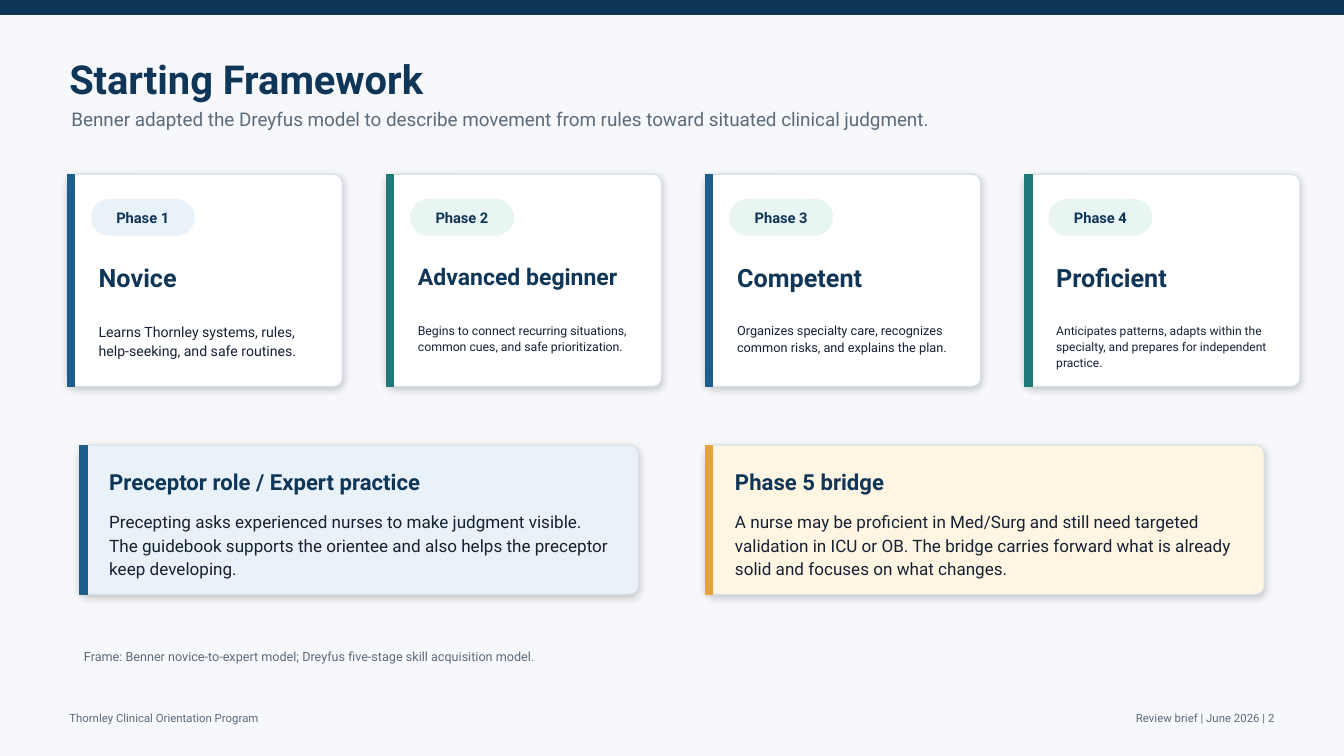
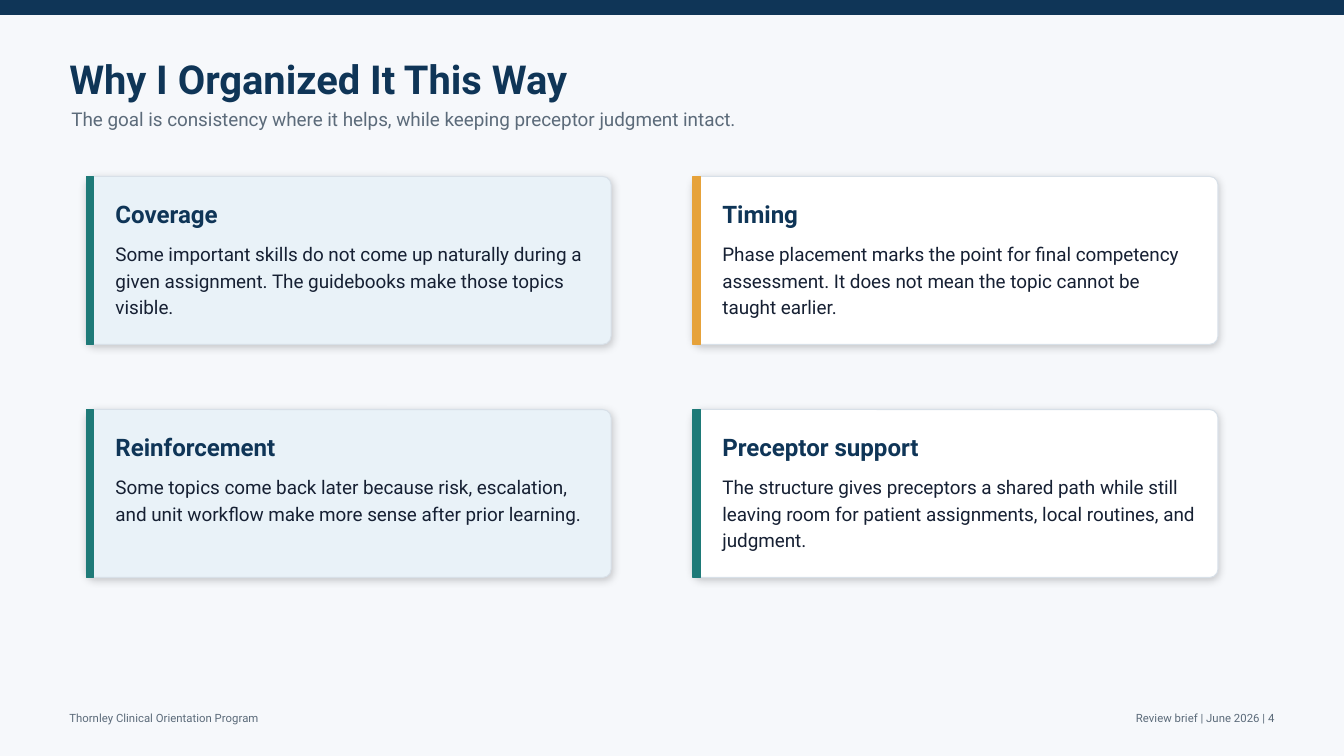
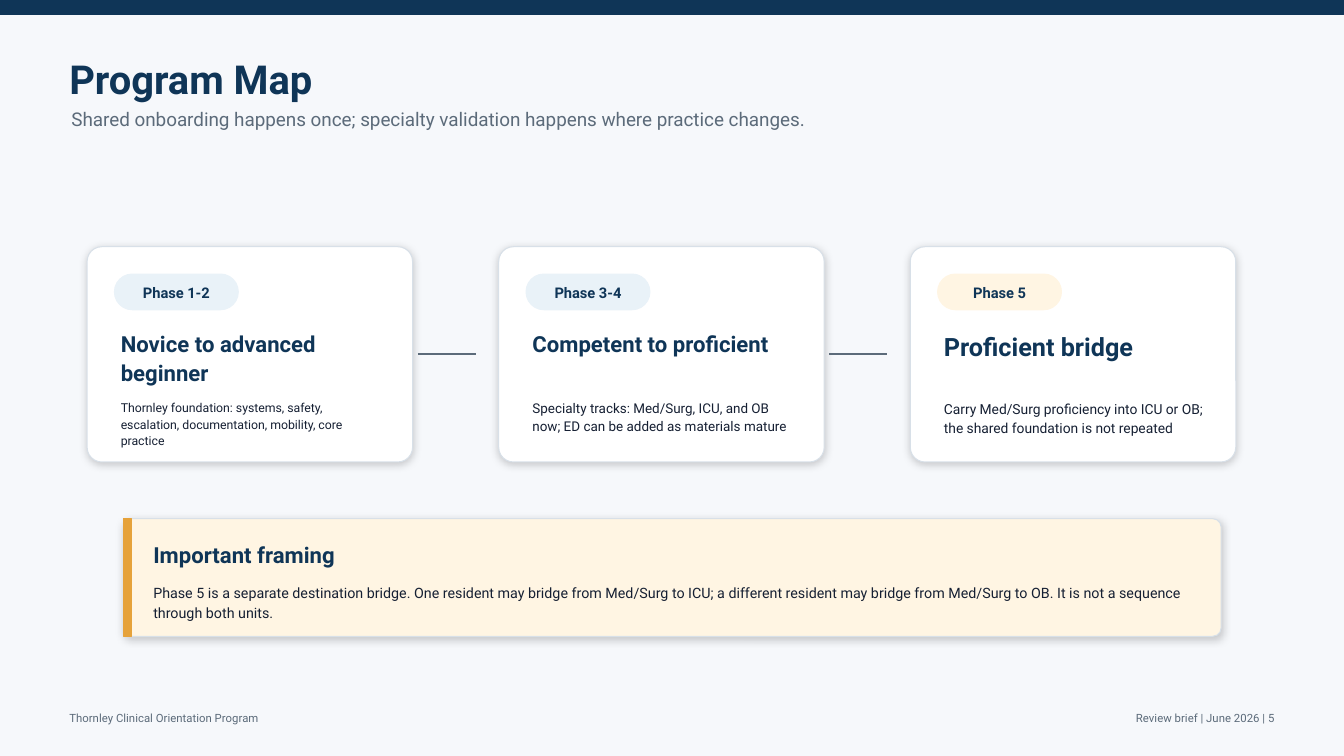
from dataclasses import dataclass

from lxml import etree
from pptx import Presentation
from pptx import util as u
from pptx.dml.color import RGBColor
from pptx.enum import shapes, text
from pptx.oxml.ns import qn

COLUMNS, ROWS = 1280, 720
WIDTH, HEIGHT = u.Emu(12192000), u.Emu(6858000)
RECT = shapes.MSO_SHAPE.RECTANGLE
ROUND = shapes.MSO_SHAPE.ROUNDED_RECTANGLE
LEFT, CENTER, RIGHT = text.PP_ALIGN.LEFT, text.PP_ALIGN.CENTER, text.PP_ALIGN.RIGHT


@dataclass(frozen=True)
class Theme:
    font: str = "Roboto"
    paper: str = "F6F8FB"
    white: str = "FFFFFF"
    navy: str = "0F3557"
    ink: str = "162033"
    muted: str = "5C6B7A"
    edge: str = "D8E0E8"
    blue: str = "1E5C8A"
    teal: str = "1E7A78"
    amber: str = "E6A23A"
    pale_blue: str = "E9F2F8"
    pale_teal: str = "E8F5F3"
    pale_amber: str = "FFF5E3"
    title: float = 28.5
    subtitle: float = 13.5
    footer: float = 8.1
    note: float = 9
    pill: float = 10.5


THEME = Theme()


@dataclass(frozen=True)
class Area:
    column: float
    row: float
    columns: float
    rows: float

    def inside(self, column: float, row: float, columns: float, rows: float) -> "Area":
        return Area(self.column + column, self.row + row, columns, rows)

    def place(self) -> tuple:
        return across(self.column), down(self.row), across(self.columns), down(self.rows)


@dataclass(frozen=True)
class Style:
    size: float
    color: str
    bold: bool = False
    align: text.PP_ALIGN = LEFT
    spacing: float = 1.08


@dataclass(frozen=True)
class Phase:
    label: str
    name: str
    detail: str
    name_size: float
    detail_size: float
    pill: str
    accent: str = ""


@dataclass(frozen=True)
class PhaseLayout:
    first: Area
    pitch: float
    corner: float
    pill: Area
    name: Area
    detail: Area
    spacing: float


@dataclass(frozen=True)
class Panel:
    area: Area
    heading: str
    body: str
    fill: str
    accent: str
    heading_size: float
    body_size: float


FRAMEWORK = PhaseLayout(
    Area(64, 166, 262, 202), 304, 8,
    Area(23, 24, 98, 34), Area(26, 80, 210, 52), Area(26, 138, 210, 50), 1.12)
PROGRAM = PhaseLayout(
    Area(83, 235, 310, 205), 392, 14,
    Area(26, 26, 118, 34), Area(28, 76, 255, 62), Area(28, 142, 255, 52), 1.14)

FRAMEWORK_PHASES = [
    Phase("Phase 1", "Novice",
          "Learns Thornley systems, rules, help-seeking, and safe routines.",
          18, 10.1, THEME.pale_blue, THEME.blue),
    Phase("Phase 2", "Advanced beginner",
          "Begins to connect recurring situations, common cues, and safe prioritization.",
          16.4, 8.8, THEME.pale_teal, THEME.teal),
    Phase("Phase 3", "Competent",
          "Organizes specialty care, recognizes common risks, and explains the plan.",
          18, 9.1, THEME.pale_teal, THEME.blue),
    Phase("Phase 4", "Proficient",
          "Anticipates patterns, adapts within the specialty, and prepares for "
          "independent practice.",
          18, 8.6, THEME.pale_teal, THEME.teal),
]
PROGRAM_PHASES = [
    Phase("Phase 1-2", "Novice to advanced beginner",
          "Thornley foundation: systems, safety, escalation, documentation, mobility, "
          "core practice",
          15.8, 8.8, THEME.pale_blue),
    Phase("Phase 3-4", "Competent to proficient",
          "Specialty tracks: Med/Surg, ICU, and OB now; ED can be added as materials mature",
          15.8, 9.6, THEME.pale_blue),
    Phase("Phase 5", "Proficient bridge",
          "Carry Med/Surg proficiency into ICU or OB; the shared foundation is not repeated",
          18, 9.9, THEME.pale_amber),
]
FRAMEWORK_PANELS = [
    Panel(Area(76, 424, 532, 142), "Preceptor role / Expert practice",
          "Precepting asks experienced nurses to make judgment visible. The guidebook "
          "supports the orientee and also helps the preceptor keep developing.",
          THEME.pale_blue, THEME.blue, 15.8, 12.2),
    Panel(Area(672, 424, 532, 142), "Phase 5 bridge",
          "A nurse may be proficient in Med/Surg and still need targeted validation in "
          "ICU or OB. The bridge carries forward what is already solid and focuses on "
          "what changes.",
          THEME.pale_amber, THEME.amber, 15.8, 12.2),
]
REASONS = [
    ("Coverage",
     "Some important skills do not come up naturally during a given assignment. "
     "The guidebooks make those topics visible.", THEME.teal),
    ("Timing",
     "Phase placement marks the point for final competency assessment. It does not "
     "mean the topic cannot be taught earlier.", THEME.amber),
    ("Reinforcement",
     "Some topics come back later because risk, escalation, and unit workflow make "
     "more sense after prior learning.", THEME.teal),
    ("Preceptor support",
     "The structure gives preceptors a shared path while still leaving room for "
     "patient assignments, local routines, and judgment.", THEME.teal),
]
FRAMING = Panel(
    Area(118, 494, 1045, 112), "Important framing",
    "Phase 5 is a separate destination bridge. One resident may bridge from Med/Surg "
    "to ICU; a different resident may bridge from Med/Surg to OB. It is not a sequence "
    "through both units.",
    THEME.pale_amber, THEME.amber, 15.8, 10.2)


def across(columns: float) -> u.Emu:
    return u.Emu(round(WIDTH * columns / COLUMNS))


def down(rows: float) -> u.Emu:
    return u.Emu(round(HEIGHT * rows / ROWS))


def rgb(color: str) -> RGBColor:
    return RGBColor.from_string(color)


def add_text(page, area: Area, words: str, style: Style) -> None:
    box = page.shapes.add_textbox(*area.place())
    frame = box.text_frame
    frame.word_wrap = True
    frame.margin_left = frame.margin_right = across(4)
    frame.margin_top = frame.margin_bottom = down(2)
    para = frame.paragraphs[0]
    para.alignment = style.align
    para.line_spacing = style.spacing
    span = para.add_run()
    span.text = words
    span.font.name = THEME.font
    span.font.size = u.Pt(style.size)
    span.font.bold = style.bold
    span.font.color.rgb = rgb(style.color)


def add_block(page, area: Area, fill: str, corner: float = 0):
    block = page.shapes.add_shape(ROUND if corner else RECT, *area.place())
    if corner:
        block.adjustments[0] = corner / area.rows
    block.shadow.inherit = False
    block.fill.solid()
    block.fill.fore_color.rgb = rgb(fill)
    block.line.color.rgb = rgb(fill)
    block.line.width = u.Pt(0)
    return block


def add_card(page, area: Area, fill: str, corner: float, accent: str = "") -> None:
    card = add_block(page, area, fill, corner)
    card.line.color.rgb = rgb(THEME.edge)
    card.line.width = u.Pt(0.75)
    effects = card._element.spPr.find(qn("a:effectLst"))
    shadow = etree.SubElement(
        effects, qn("a:outerShdw"), blurRad=str(u.Pt(6)), dist=str(u.Pt(1.5)),
        dir="5400000", algn="ctr", rotWithShape="0")
    black = etree.SubElement(shadow, qn("a:srgbClr"), val="000000")
    etree.SubElement(black, qn("a:alpha"), val="20000")
    if accent:
        add_block(page, area.inside(0, 0, 7, area.rows), accent)


def add_phase(page, area: Area, layout: PhaseLayout, phase: Phase) -> None:
    def part(cell: Area) -> Area:
        return area.inside(cell.column, cell.row, cell.columns, cell.rows)

    add_card(page, area, THEME.white, layout.corner, phase.accent)
    pill = part(layout.pill)
    add_block(page, pill, phase.pill, pill.rows / 2)
    add_text(page, pill.inside(12, 6, pill.columns - 24, 24), phase.label,
             Style(THEME.pill, THEME.navy, True, CENTER))
    add_text(page, part(layout.name), phase.name, Style(phase.name_size, THEME.navy, True))
    add_text(page, part(layout.detail), phase.detail,
             Style(phase.detail_size, THEME.ink, spacing=layout.spacing))


def add_phases(page, layout: PhaseLayout, phases: list[Phase], linked: bool = False) -> None:
    first = layout.first
    for index, phase in enumerate(phases):
        area = first.inside(index * layout.pitch, 0, first.columns, first.rows)
        add_phase(page, area, layout, phase)
        if linked and index < len(phases) - 1:
            add_link(page, area.column + area.columns + 5, area.row + 102, 55)


def add_link(page, column: float, row: float, columns: float) -> None:
    link = page.shapes.add_connector(
        shapes.MSO_CONNECTOR.STRAIGHT,
        across(column), down(row), across(column + columns), down(row))
    link.line.color.rgb = rgb(THEME.muted)
    link.line.width = u.Pt(1.5)
    etree.SubElement(link._element.spPr, qn("a:effectLst"))


def add_panel(page, panel: Panel) -> None:
    area = panel.area
    add_card(page, area, panel.fill, 8, panel.accent)
    add_text(page, area.inside(24, 18, area.columns - 42, 34), panel.heading,
             Style(panel.heading_size, THEME.navy, True))
    add_text(page, area.inside(24, 58, area.columns - 42, area.rows - 70), panel.body,
             Style(panel.body_size, THEME.ink, spacing=1.16))


def add_page(deck, title: str, subtitle: str, number: int):
    page = deck.slides.add_slide(deck.slide_layouts[6])
    page.background.fill.solid()
    page.background.fill.fore_color.rgb = rgb(THEME.paper)
    add_block(page, Area(0, 0, COLUMNS, 14), THEME.navy)
    add_text(page, Area(62, 46, 860, 54), title, Style(THEME.title, THEME.navy, True))
    add_text(page, Area(64, 99, 950, 34), subtitle, Style(THEME.subtitle, THEME.muted))
    add_text(page, Area(62, 674, 360, 18), "Thornley Clinical Orientation Program",
             Style(THEME.footer, THEME.muted))
    add_text(page, Area(958, 674, 260, 18), f"Review brief | June 2026 | {number}",
             Style(THEME.footer, THEME.muted, align=RIGHT))
    return page


def add_framework(deck) -> None:
    page = add_page(
        deck, "Starting Framework",
        "Benner adapted the Dreyfus model to describe movement from rules toward "
        "situated clinical judgment.", 2)
    add_phases(page, FRAMEWORK, FRAMEWORK_PHASES)
    for panel in FRAMEWORK_PANELS:
        add_panel(page, panel)
    add_text(page, Area(76, 615, 720, 20),
             "Frame: Benner novice-to-expert model; Dreyfus five-stage skill "
             "acquisition model.", Style(THEME.note, THEME.muted))


def add_reasons(deck) -> None:
    page = add_page(
        deck, "Why I Organized It This Way",
        "The goal is consistency where it helps, while keeping preceptor judgment intact.", 4)
    fills = THEME.pale_blue, THEME.white
    for index, (heading, body, accent) in enumerate(REASONS):
        row, column = divmod(index, 2)
        area = Area(82 + 578 * column, 168 + 222 * row, 500, 160)
        add_panel(page, Panel(area, heading, body, fills[column], accent, 17.2, 13.5))


def add_program(deck) -> None:
    page = add_page(
        deck, "Program Map",
        "Shared onboarding happens once; specialty validation happens where practice "
        "changes.", 5)
    add_phases(page, PROGRAM, PROGRAM_PHASES, linked=True)
    add_panel(page, FRAMING)


def main() -> None:
    deck = Presentation()
    deck.slide_width, deck.slide_height = WIDTH, HEIGHT
    add_framework(deck)
    add_reasons(deck)
    add_program(deck)
    deck.save("out.pptx")


if __name__ == "__main__":
    main()
